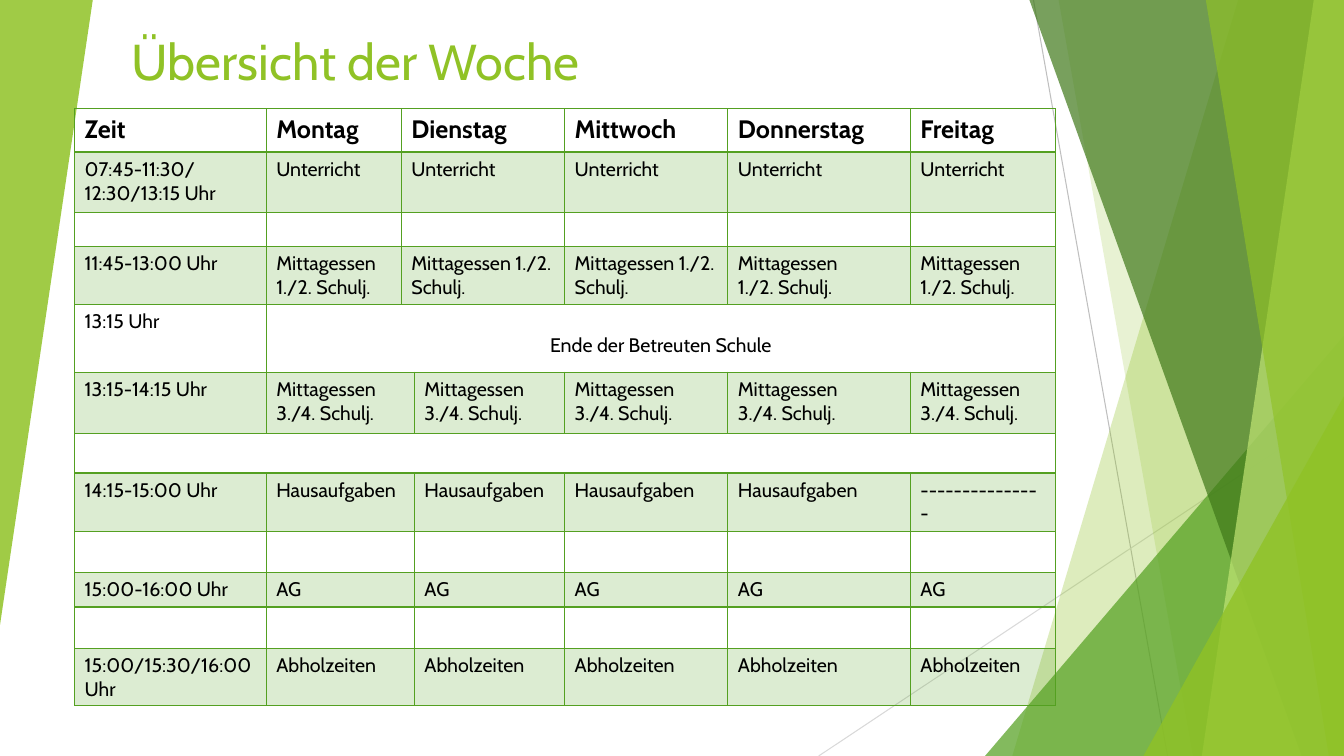
from collections import namedtuple
from dataclasses import dataclass

from lxml.etree import SubElement
from pptx import Presentation
from pptx.dml.color import RGBColor
from pptx.enum.shapes import MSO_CONNECTOR, MSO_SHAPE
from pptx.enum.text import MSO_ANCHOR, PP_ALIGN
from pptx.oxml.ns import qn
from pptx.util import Inches, Pt

Box = namedtuple("Box", "left top width height")
Facet = namedtuple("Facet", "top_reach bottom_reach color opacity")
Wedge = namedtuple("Wedge", "width height color opacity")
Row = namedtuple("Row", "height starts texts")


@dataclass(frozen=True)
class Theme:
    """Colours, font and type sizes of the slide."""
    lime: str = "90C226"
    leaf: str = "54A021"
    forest: str = "3F7819"
    pale: str = "C0E474"
    ink: str = "000000"
    ray_dark: str = "BFBFBF"
    ray_light: str = "D9D9D9"
    font: str = "Cabin"
    title: int = 36
    header: int = 18
    body: int = 14
    band_opacity: int = 20


THEME = Theme()
SLIDE = Box(0, 0, 13.33, 7.5)
FACETS = [
    Facet(1.05, 3.29, THEME.lime, 30),
    Facet(2.83, 1.5, THEME.lime, 20),
    Wedge(3.56, 4.17, THEME.leaf, 72),
    Facet(3.12, 0.42, THEME.forest, 70),
    Facet(0.3, 1.41, THEME.pale, 70),
    Facet(1.37, 0.15, THEME.lime, 65),
    Wedge(1.99, 3.57, THEME.lime, 80),
]
RAYS = [
    ((3.08, 0), (1.75, 7.5), THEME.ray_dark),
    ((0, 4.03), (5.21, 7.5), THEME.ray_light),
]
COLUMNS = [1.9, 1.34, 0.13, 1.49, 1.62, 1.81, 1.44]
EARLY = [0, 1, 2, 4, 5, 6]
LATE = [0, 1, 3, 4, 5, 6]


def lunch(grades):
    """Return the five lunch entries for the given school years."""
    entries = [f"Mittagessen {grades} Schulj."] * 5
    entries[3] = f"Mittagessen\n{grades} Schulj."
    return entries


ROWS = [
    Row(0.43, EARLY, ["Zeit", "Montag", "Dienstag", "Mittwoch", "Donnerstag", "Freitag"]),
    Row(0.6, EARLY, ["07:45-11:30/\n12:30/13:15 Uhr"] + ["Unterricht"] * 5),
    Row(0.33, EARLY, [""] * 6),
    Row(0.58, EARLY, ["11:45-13:00 Uhr"] + lunch("1./2.")),
    Row(0.67, [0, 1], ["13:15 Uhr", "Ende der Betreuten Schule"]),
    Row(0.61, LATE, ["13:15-14:15 Uhr"] + lunch("3./4.")),
    Row(0.39, [0], [""]),
    Row(0.58, LATE, ["14:15-15:00 Uhr"] + ["Hausaufgaben"] * 4 + ["-" * 15]),
    Row(0.41, LATE, [""] * 6),
    Row(0.34, LATE, ["15:00-16:00 Uhr"] + ["AG"] * 5),
    Row(0.41, LATE, [""] * 6),
    Row(0.57, LATE, ["15:00/15:30/16:00\vUhr"] + ["Abholzeiten"] * 5),
]


def apply(target, formats):
    """Set every attribute named in formats on the target."""
    for name, value in formats.items():
        setattr(target, name, value)


def style_font(font, size, color, bold=False):
    """Give a font its face, size, weight and colour."""
    apply(font, {"name": THEME.font, "size": Pt(size), "bold": bold})
    font.color.rgb = RGBColor.from_string(color)


def paint(filled, properties, color, opacity):
    """Fill a shape or cell with a partly transparent colour."""
    filled.fill.solid()
    filled.fill.fore_color.rgb = RGBColor.from_string(color)
    tint = properties.find(f"{qn('a:solidFill')}/{qn('a:srgbClr')}")
    SubElement(tint, qn("a:alpha"), val=str(opacity * 1000))


def finish(facet, color, opacity):
    """Colour a decorative facet without outline or shadow."""
    facet.shadow.inherit = False
    facet.line.fill.background()
    paint(facet, facet.element.spPr, color, opacity)


def add_wedge(slide, box, color, opacity, rotation=0):
    """Add a right-angled triangle filling the box."""
    wedge = slide.shapes.add_shape(MSO_SHAPE.ISOSCELES_TRIANGLE, *map(Inches, box))
    wedge.adjustments[0] = 1
    wedge.rotation = rotation
    finish(wedge, color, opacity)


def add_ribbon(slide, box):
    """Draw the rays and overlapping facets along the right edge of the box."""
    right, bottom = box.left + box.width, box.top + box.height
    for start, end, color in RAYS:
        ends = [Inches(length) for reach, drop in (start, end)
                for length in (right - reach, box.top + drop)]
        ray = slide.shapes.add_connector(MSO_CONNECTOR.STRAIGHT, *ends)
        ray.line.width = Pt(0.75)
        ray.line.color.rgb = RGBColor.from_string(color)
        SubElement(ray.element.spPr, qn("a:effectLst"))
    for part in FACETS:
        if isinstance(part, Wedge):
            place = Box(right - part.width, bottom - part.height, part.width, part.height)
            add_wedge(slide, place, part.color, part.opacity)
            continue
        corners = [(right - part.top_reach, box.top), (right, box.top),
                   (right, bottom), (right - part.bottom_reach, bottom)]
        points = [(Inches(x), Inches(y)) for x, y in corners]
        outline = slide.shapes.build_freeform(*points[0])
        outline.add_line_segments(points[1:], close=True)
        finish(outline.convert_to_shape(), part.color, part.opacity)


def add_title(slide, box):
    """Add the slide heading."""
    frame = slide.shapes.add_textbox(*map(Inches, box)).text_frame
    apply(frame, {"word_wrap": True, "vertical_anchor": MSO_ANCHOR.BOTTOM,
                  "text": "Übersicht der Woche"})
    style_font(frame.paragraphs[0].runs[0].font, THEME.title, THEME.lime)


def add_borders(cell, widths):
    """Draw the four cell borders with the given point widths."""
    properties = cell._tc.get_or_add_tcPr()
    for side, width in widths.items():
        edge = SubElement(properties, qn(f"a:ln{side}"), w=str(Pt(width)))
        color = SubElement(SubElement(edge, qn("a:solidFill")), qn("a:srgbClr"))
        color.set("val", THEME.leaf)


def write_entry(cell, text, is_header):
    """Write one timetable entry, keeping empty cells at body size."""
    cell.text = text
    size = THEME.header if is_header else THEME.body
    for paragraph in cell.text_frame.paragraphs:
        for run in paragraph.runs:
            style_font(run.font, size, THEME.ink, is_header)
        if not text:
            SubElement(paragraph._p, qn("a:endParaRPr"), sz=str(size * 100))


def add_timetable(slide, box):
    """Add the weekly timetable with its merged and banded cells."""
    timetable = slide.shapes.add_table(len(ROWS), len(COLUMNS), *map(Inches, box)).table
    apply(timetable, {"first_row": False, "horz_banding": False})
    for column, width in zip(timetable.columns, COLUMNS):
        column.width = Inches(width)
    for index, row in enumerate(ROWS):
        timetable.rows[index].height = Inches(row.height)
        for column in range(len(COLUMNS)):
            cell = timetable.cell(index, column)
            add_borders(cell, {"L": 1, "R": 1, "T": 2 if index == 1 else 1,
                               "B": 2 if index == 0 else 1})
            if index % 2:
                paint(cell, cell._tc.tcPr, THEME.leaf, THEME.band_opacity)
            else:
                cell.fill.background()
        stops = row.starts[1:] + [len(COLUMNS)]
        for start, stop, text in zip(row.starts, stops, row.texts):
            cell = timetable.cell(index, start)
            if stop - start > 1:
                cell.merge(timetable.cell(index, stop - 1))
            write_entry(cell, text, index == 0)
            if len(row.starts) == 2 and start:
                cell.margin_top = Inches(0.29)
                cell.text_frame.paragraphs[0].alignment = PP_ALIGN.CENTER


def main():
    """Build and save the weekly overview slide."""
    deck = Presentation()
    apply(deck, {"slide_width": Inches(SLIDE.width), "slide_height": Inches(SLIDE.height)})
    slide = deck.slides.add_slide(deck.slide_layouts[6])
    add_ribbon(slide, SLIDE)
    add_wedge(slide, Box(0, 0, 0.92, 6.2), THEME.lime, 85, rotation=180)
    add_title(slide, Box(1.21, 0.28, 5.7, 0.67))
    add_timetable(slide, Box(0.74, 1.08, sum(COLUMNS), sum(row.height for row in ROWS)))
    deck.save("out.pptx")


if __name__ == "__main__":
    main()
